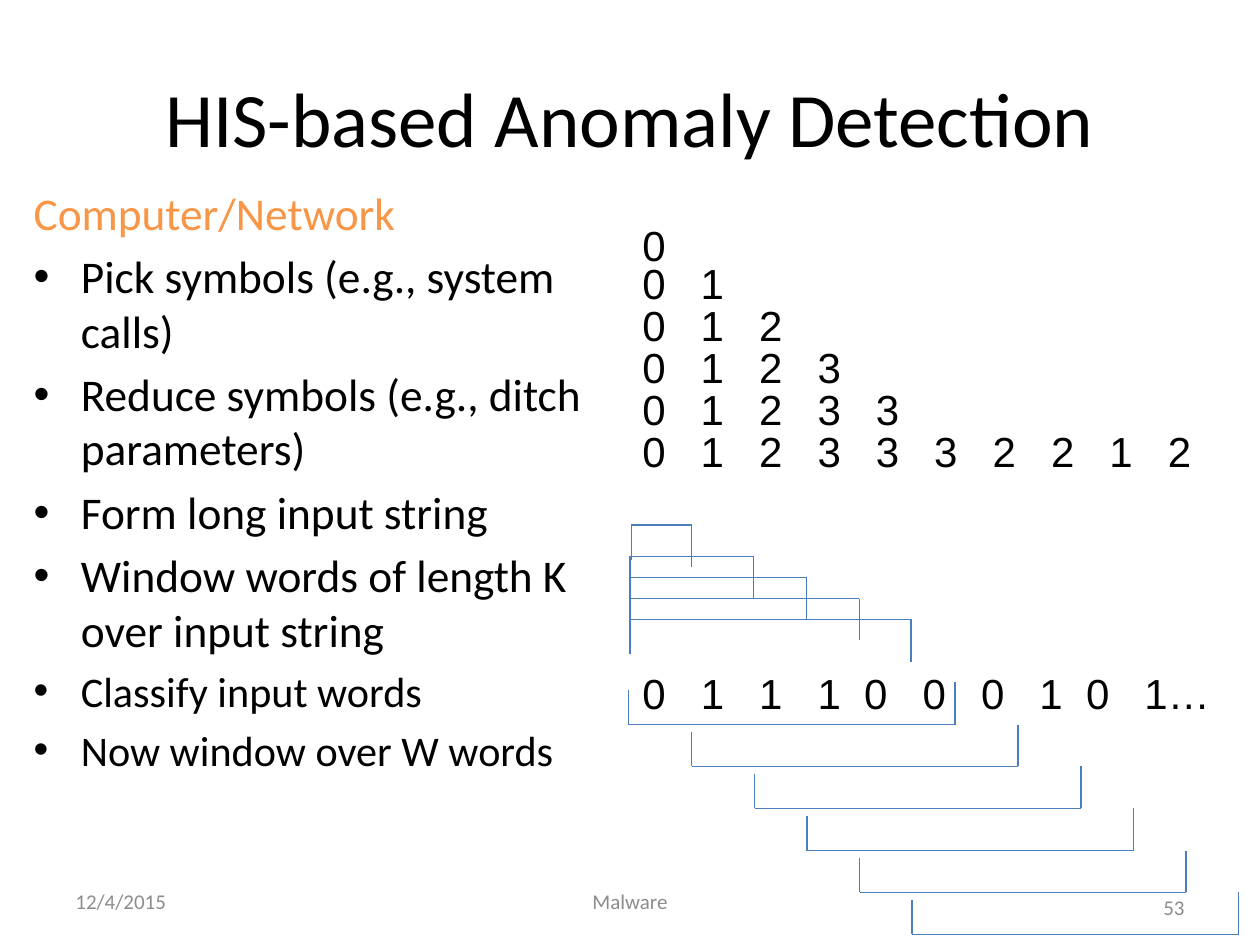
from dataclasses import dataclass
from lxml import etree
from pptx import Presentation
from pptx.dml.color import RGBColor
from pptx.enum.shapes import MSO_CONNECTOR
from pptx.enum.text import MSO_ANCHOR, MSO_AUTO_SIZE, PP_ALIGN
from pptx.oxml.ns import qn
from pptx.util import Pt

LINE = MSO_CONNECTOR.STRAIGHT
MID = MSO_ANCHOR.MIDDLE
FIXED = MSO_AUTO_SIZE.NONE
LEFT, CENTER, RIGHT = PP_ALIGN.LEFT, PP_ALIGN.CENTER, PP_ALIGN.RIGHT


@dataclass(frozen=True)
class Theme:
    ink: RGBColor = RGBColor(0, 0, 0)
    accent: RGBColor = RGBColor(0xF7, 0x96, 0x46)
    gray: RGBColor = RGBColor(0x8C, 0x8C, 0x8C)
    blue: RGBColor = RGBColor(0x4B, 0x7E, 0xBC)
    sans: str = "Calibri"
    digit: str = "Arial"
    title: float = 44
    large: float = 25.9
    small: float = 24.1
    code: float = 24
    foot: float = 12


theme = Theme()


def write(para, text, face, size, color):
    run = para.add_run()
    run.text = text
    run.font.name = face
    run.font.size = Pt(size)
    run.font.color.rgb = color


def bracket(left, right, base, side):
    group = slide.shapes.add_group_shape()
    for x1, y1, x2, y2 in (
        (left, base + side * 19.8, left, base),
        (right, base, right, base + side * 24),
        (right, base, left, base),
    ):
        line = group.shapes.add_connector(LINE, Pt(x1), Pt(y1), Pt(x2), Pt(y2))
        line.line.color.rgb = theme.blue
        line.line.width = Pt(0.75)
        etree.SubElement(line._element.spPr, qn("a:effectLst"))


deck = Presentation()
deck.slide_width, deck.slide_height = Pt(720), Pt(540)
slide = deck.slides.add_slide(deck.slide_layouts[1])

title = slide.shapes.title
title.left, title.top, title.width, title.height = Pt(36), Pt(21.6), Pt(648), Pt(90)
title.text_frame.vertical_anchor = MID
para = title.text_frame.paragraphs[0]
para.alignment = CENTER
write(para, "HIS-based Anomaly Detection", theme.sans, theme.title, theme.ink)

body = slide.placeholders[1]
body.left, body.top, body.width, body.height = Pt(12), Pt(102), Pt(336), Pt(364)
frame = body.text_frame
frame.auto_size = FIXED
items = [
    ("Computer/Network", theme.large, theme.accent),
    ("Pick symbols (e.g., system calls)", theme.large, theme.ink),
    ("Reduce symbols (e.g., ditch parameters)", theme.large, theme.ink),
    ("Form long input string", theme.large, theme.ink),
    ("Window words of length K over input string", theme.large, theme.ink),
    ("Classify input words", theme.small, theme.ink),
    ("Now window over W words", theme.small, theme.ink),
]
for i, (text, size, color) in enumerate(items):
    para = frame.paragraphs[0] if i == 0 else frame.add_paragraph()
    props = para._p.get_or_add_pPr()
    props.set("marL", str(Pt(27)))
    props.set("indent", str(Pt(-27)))
    if i == 0:
        etree.SubElement(props, qn("a:buNone"))
    else:
        etree.SubElement(props, qn("a:buChar")).set("char", "•")
    write(para, text, theme.sans, size, color)

for text, left, top, width, align in (
    ("12/4/2015", 36, 500.5, 168, LEFT),
    ("Malware", 246, 500.5, 228, CENTER),
    ("53", 516, 504, 168, RIGHT),
):
    box = slide.shapes.add_textbox(Pt(left), Pt(top), Pt(width), Pt(28.8))
    box.text_frame.word_wrap = True
    box.text_frame.vertical_anchor = MID
    para = box.text_frame.paragraphs[0]
    para.alignment = align
    write(para, text, theme.sans, theme.foot, theme.gray)

wide, tight = 33.36, 26.69
rows = [
    ("0", 126, 54),
    ("01", 147.6, 78),
    ("012", 171.4, 114),
    ("0123", 195.4, 144),
    ("01233", 219.4, 186),
    ("0123332212", 243.4, 354),
    ("0111000101", 381.6, 342),
]
for word, top, width in rows:
    last = word == rows[-1][0]
    box = slide.shapes.add_textbox(Pt(360), Pt(top), Pt(width), Pt(32.4))
    box.text_frame.word_wrap = True
    para = box.text_frame.paragraphs[0]
    para.line_spacing = 0.87
    stops = etree.SubElement(para._p.get_or_add_pPr(), qn("a:tabLst"))
    spot = 0
    for i in range(1, len(word)):
        spot += tight if last and i in (4, 8) else wide
        stop = etree.SubElement(stops, qn("a:tab"))
        stop.set("pos", str(Pt(spot)))
        stop.set("algn", "l")
    text = "\t".join(word) + ("…" if last else "")
    write(para, text, theme.digit, theme.code, theme.ink)

for i, left in enumerate((359.2, 395.2, 431.2, 461.2, 491.2, 521.2)):
    bracket(left, left + 186.6, 414 + 24 * i, -1)

for right, base in (
    (395.2, 300), (520.6, 354), (491, 342), (460.8, 330), (430.6, 318),
):
    bracket(360.7 if base == 300 else 360, right, base, 1)

deck.save("out.pptx")
